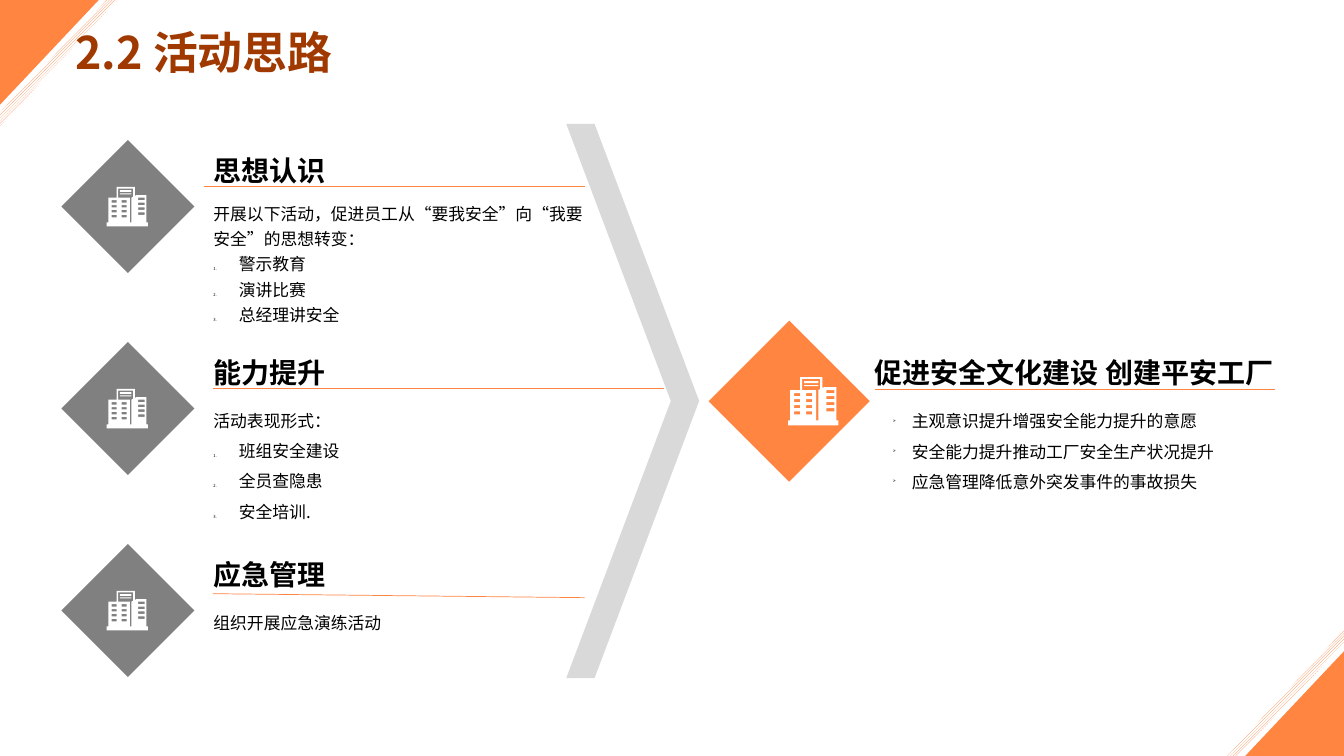
from lxml import etree
from pptx import Presentation
from pptx import util as u
from pptx.dml.color import RGBColor
from pptx.enum import dml, shapes, text
from pptx.oxml.ns import qn

FONT = "Noto Sans CJK SC"
COLORS = {
    "orange": "FF8541",
    "rust": "A03900",
    "silver": "D9D9D9",
    "gray": "808080",
    "black": "000000",
    "white": "FFFFFF",
}
WIDTH, HEIGHT = u.Cm(33.87), u.Cm(19.05)
ROW_TOP, ROW_PITCH = 3.53, 5.09

# Corner outlines in hundredths of a centimetre
CORNER_TRIANGLE = [(0, 0), (249, 0), (0, 264)]
CORNER_STRIPE = [(269, 0), (295, 0), (0, 318), (0, 284)]

# Building icon on a grid 50 wide and 48 high
BUILDING_OUTLINE = [
    (12, 0), (34, 0), (34, 11), (36, 10), (48, 10), (48, 43), (50, 43),
    (50, 48), (0, 48), (0, 43), (2, 43), (2, 13), (12, 13),
]
BUILDING_EDGE = [
    (14, 2), (14, 13), (28, 13), (28, 43), (30, 43), (30, 13), (32, 12), (32, 2),
]

# Heading, body lines, heading width, body height, line spacing, rule (x1, dy1, x2, dy2)
ROWS = [
    ("思想认识",
     ["开展以下活动，促进员工从“要我安全”向“我要安全”的思想转变：",
      "警示教育", "演讲比赛", "总经理讲安全"],
     9.98, 3.73, 18, (5.13, 1.17, 14.73, 1.17)),
    ("能力提升",
     ["活动表现形式：", "班组安全建设", "全员查隐患", "安全培训."],
     10.69, 1.73, 21.6, (5.36, 1.17, 16.74, 1.17)),
    ("应急管理",
     ["组织开展应急演练活动"],
     10.69, 1.73, 21.6, (5.36, 1.25, 14.73, 1.35)),
]
GOALS = [
    "主观意识提升增强安全能力提升的意愿",
    "安全能力提升推动工厂安全生产状况提升",
    "应急管理降低意外突发事件的事故损失",
]


def color(name):
    return RGBColor.from_string(COLORS[name])


def paint(shape, fill):
    shape.shadow.inherit = False
    shape.fill.solid()
    shape.fill.fore_color.rgb = color(fill)
    shape.line.fill.background()


def add_preset(slide, kind, left, top, width, height, fill):
    shape = slide.shapes.add_shape(
        kind, u.Cm(left), u.Cm(top), u.Cm(width), u.Cm(height))
    paint(shape, fill)
    return shape


def add_outline(slide, contours, fill, unit, left=0, top=0):
    """Draw closed contours, given in grid units of `unit` cm, as one shape."""
    first, *others = contours
    builder = slide.shapes.build_freeform(*first[0], scale=u.Cm(unit))
    builder.add_line_segments(first[1:], close=True)
    for contour in others:
        builder.move_to(*contour[0])
        builder.add_line_segments(contour[1:], close=True)
    shape = builder.convert_to_shape(u.Cm(left), u.Cm(top))
    paint(shape, fill)
    return shape


def add_corner(slide, opposite=False):
    triangle = add_outline(slide, [CORNER_TRIANGLE], "orange", 0.01)
    stripe = add_outline(slide, [CORNER_STRIPE], "orange", 0.01)
    stripe.fill.patterned()
    stripe.fill.pattern = dml.MSO_PATTERN.LIGHT_UPWARD_DIAGONAL
    stripe.fill.fore_color.rgb = color("orange")
    stripe.fill.back_color.rgb = color("white")
    if opposite:
        for shape in (triangle, stripe):
            shape.rotation = 180
            shape.left, shape.top = WIDTH - shape.width, HEIGHT - shape.height


def box(left, top, right, bottom):
    return [(left, top), (right, top), (right, bottom), (left, bottom)]


def add_building(slide, left, top, unit):
    windows = [box(x, y, x + 6, y + 3) for x in (6, 18) for y in range(16, 35, 6)]
    windows += [box(38, y, 46, y + 3) for y in range(13, 32, 6)]
    signs = [box(16, 4, 30, 6), box(16, 8, 30, 9)]
    contours = [BUILDING_OUTLINE, BUILDING_EDGE] + windows + signs
    add_outline(slide, contours, "white", unit, left, top)


def add_rule(slide, x1, y1, x2, y2):
    line = slide.shapes.add_connector(
        shapes.MSO_CONNECTOR.STRAIGHT, u.Cm(x1), u.Cm(y1), u.Cm(x2), u.Cm(y2))
    line.line.color.rgb = color("orange")
    line.line.width = u.Pt(0.5)
    etree.SubElement(line._element.spPr, qn("a:effectLst"))


def add_bullet(paragraph, tag, indent, **attributes):
    properties = paragraph._p.get_or_add_pPr()
    properties.set("marL", str(u.Cm(indent)))
    properties.set("indent", str(-u.Cm(indent)))
    etree.SubElement(properties, qn("a:buSzPct")).set("val", "25000")
    bullet = etree.SubElement(properties, qn(tag))
    for name, value in attributes.items():
        bullet.set(name, value)


def add_text(slide, lines, left, top, width, height, size=12, spacing=21.6,
             fill="black", bold=False, wrap=True, middle=False):
    """Add a text box and return its paragraphs."""
    frame = slide.shapes.add_textbox(
        u.Cm(left), u.Cm(top), u.Cm(width), u.Cm(height)).text_frame
    frame.word_wrap = wrap
    frame.vertical_anchor = (
        text.MSO_ANCHOR.MIDDLE if middle else text.MSO_ANCHOR.TOP)
    for index, line in enumerate(lines):
        paragraph = frame.add_paragraph() if index else frame.paragraphs[0]
        paragraph.alignment = text.PP_ALIGN.LEFT
        paragraph.line_spacing = u.Pt(spacing)
        run = paragraph.add_run()
        run.text = line
        run.font.size = u.Pt(size)
        run.font.bold = bold
        run.font.color.rgb = color(fill)
        run.font.name = FONT
        east_asian = etree.SubElement(run._r.get_or_add_rPr(), qn("a:ea"))
        east_asian.set("typeface", FONT)
    return frame.paragraphs


def add_heading(slide, heading, left, top, width):
    add_text(slide, [heading], left, top, width, 1.09,
             size=20, bold=True, wrap=False, middle=True)


def add_row(slide, top, heading, lines, width, height, spacing, rule):
    add_preset(slide, shapes.MSO_SHAPE.DIAMOND, 1.55, top, 3.35, 3.35, "gray")
    add_building(slide, 2.69, top + 1.18, 0.0208)
    add_heading(slide, heading, 5.13, top + 0.25, width)
    paragraphs = add_text(slide, lines, 5.13, top + 1.35, width, height,
                          spacing=spacing)
    for paragraph in paragraphs[1:]:
        add_bullet(paragraph, "a:buAutoNum", 0.64, type="arabicPeriod")
    x1, y1, x2, y2 = rule
    add_rule(slide, x1, top + y1, x2, top + y2)


def add_goal(slide):
    add_preset(slide, shapes.MSO_SHAPE.DIAMOND, 17.86, 8.08, 4.06, 4.06, "orange")
    add_building(slide, 19.86, 9.5, 0.0254)
    # The heading box is wide enough to hold its text on one line
    add_heading(slide, "促进安全文化建设 创建平安工厂", 21.79, 8.89, 11.2)
    for paragraph in add_text(slide, GOALS, 22.25, 9.98, 8.94, 2.74):
        add_bullet(paragraph, "a:buChar", 0.48, char="➢")
    add_rule(slide, 22.05, 9.8, 32.13, 9.8)


def main():
    presentation = Presentation()
    presentation.slide_width, presentation.slide_height = WIDTH, HEIGHT
    slide = presentation.slides.add_slide(presentation.slide_layouts[6])

    # Corners and title
    add_corner(slide, opposite=True)
    add_corner(slide)
    add_text(slide, ["2.2 活动思路"], 1.65, 0.63, 27.61, 1.57,
             size=32, spacing=34.5, fill="rust", bold=True)

    # Three means on the left lead to one goal on the right
    chevron = add_preset(slide, shapes.MSO_SHAPE.CHEVRON,
                         14.27, 3.12, 3.35, 13.97, "silver")
    chevron.adjustments[0] = 0.787
    for index, row in enumerate(ROWS):
        add_row(slide, ROW_TOP + index * ROW_PITCH, *row)
    add_goal(slide)

    presentation.save("out.pptx")


if __name__ == "__main__":
    main()
